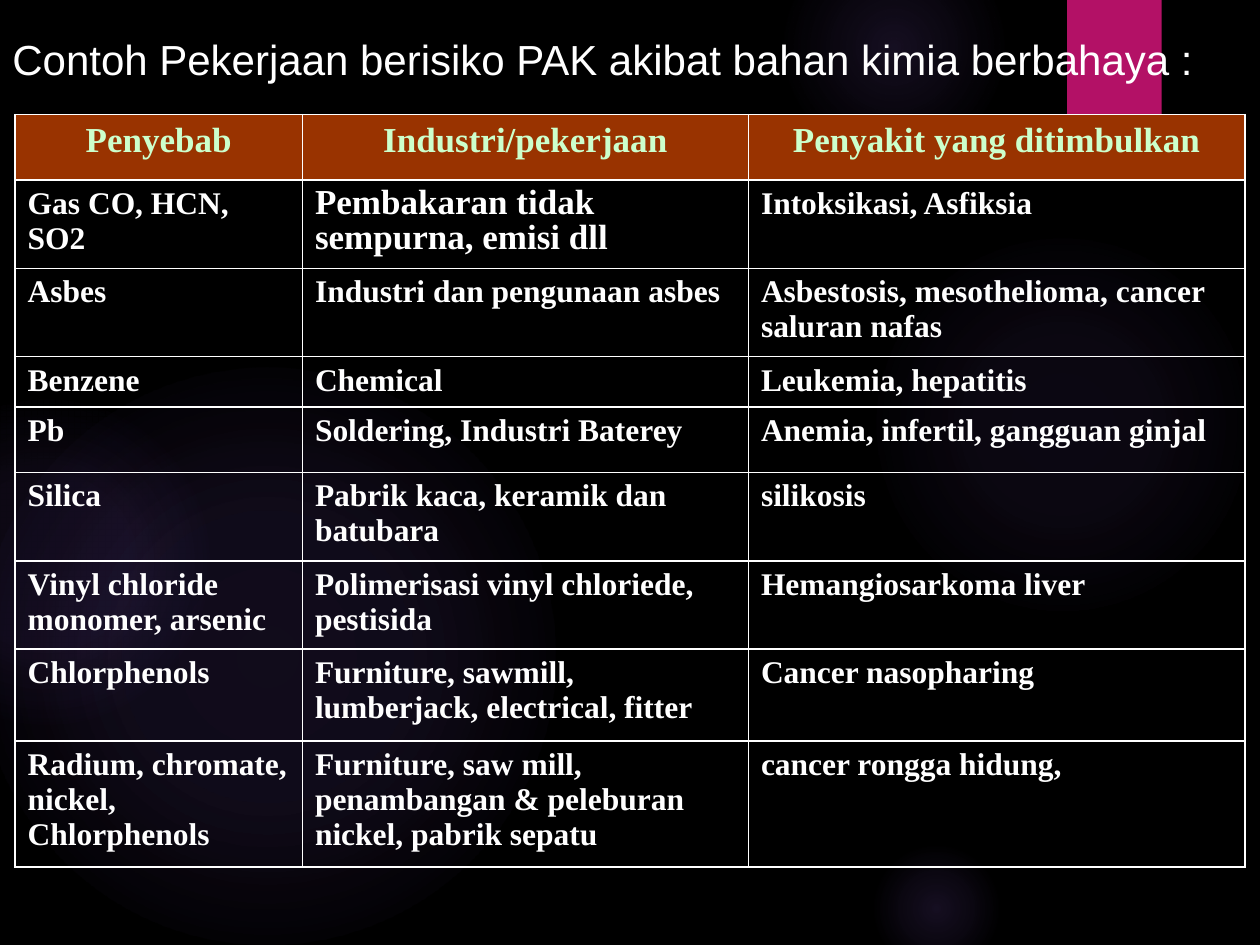
"""Build a slide listing jobs at risk of disease from hazardous chemicals."""
import dataclasses
import typing

import pptx
import pptx.dml.color
import pptx.enum.shapes
import pptx.enum.text
import pptx.oxml
import pptx.oxml.ns
import pptx.util

SHAPE = pptx.enum.shapes.MSO_SHAPE
ALIGN = pptx.enum.text.PP_ALIGN
SPACE = pptx.oxml.ns.nsdecls("a")


@dataclasses.dataclass(frozen=True)
class Theme:
    """Colours, fonts and type sizes."""
    back: str = "000000"
    text: str = "FFFFFF"
    glow: str = "9B6BF2"
    ribbon: str = "B31166"
    head: str = "993300"
    label: str = "CCFFCC"
    sans: str = "Arial"
    serif: str = "Times New Roman"
    title: int = 24
    large: int = 20
    body: int = 18


@dataclasses.dataclass(frozen=True)
class Box:
    """A place on a grid of 100 columns by 75 rows."""
    col: float
    row: float
    wide: float
    high: float

    def place(self) -> tuple[int, ...]:
        """Return left, top, width and height."""
        return tuple(map(unit, (self.col, self.row, self.wide, self.high)))


class Glow(typing.NamedTuple):
    """A round light with its centre, middle and edge strengths."""
    col: float
    row: float
    size: float
    core: int
    mid: int
    edge: int


class Entry(typing.NamedTuple):
    """One table row with its height in grid rows."""
    high: float
    cause: str
    work: str
    harm: str


THEME = Theme()
GLOWS = (
    Glow(68.9, 18.3, 30.8, 7, 6, 69),
    Glow(62.2, -5, 17.5, 14, 7, 73),
    Glow(68.9, 66.7, 10.8, 14, 7, 66),
    Glow(-1.7, 29.2, 45.8, 11, 10, 75),
    Glow(-9.2, 31.7, 25.8, 8, 8, 72),
)
WIDTHS = (22.8, 35.4, 39.4)
ENTRIES = (
    Entry(5.2, "Penyebab", "Industri/pekerjaan", "Penyakit yang ditimbulkan"),
    Entry(7, "Gas CO, HCN, SO2", "Pembakaran tidak sempurna, emisi dll", "Intoksikasi, Asfiksia"),
    Entry(7, "Asbes", "Industri dan pengunaan asbes", "Asbestosis, mesothelioma, cancer saluran nafas"),
    Entry(4, "Benzene", "Chemical", "Leukemia, hepatitis"),
    Entry(5.2, "Pb", "Soldering, Industri Baterey", "Anemia, infertil, gangguan ginjal"),
    Entry(7, "Silica", "Pabrik kaca, keramik dan batubara", "silikosis"),
    Entry(7, "Vinyl chloride monomer, arsenic", "Polimerisasi vinyl chloriede, pestisida",
          "Hemangiosarkoma liver"),
    Entry(7.3, "Chlorphenols", "Furniture, sawmill, lumberjack, electrical, fitter", "Cancer nasopharing"),
    Entry(10, "Radium, chromate, nickel, Chlorphenols",
          "Furniture, saw mill, penambangan & peleburan nickel, pabrik sepatu", "cancer rongga hidung,"),
)


def unit(count: float) -> int:
    """Turn grid steps into a length."""
    return pptx.util.Inches(count / 10)


def paint(fill, tint: str) -> None:
    """Give a fill one solid colour."""
    fill.solid()
    fill.fore_color.rgb = pptx.dml.color.RGBColor.from_string(tint)


def style(frame, font: str, size: int, tint: str, bold: bool = False) -> None:
    """Format every run of a text frame."""
    for para in frame.paragraphs:
        for run in para.runs:
            run.font.name = font
            run.font.size = pptx.util.Pt(size)
            run.font.bold = bold
            run.font.color.rgb = pptx.dml.color.RGBColor.from_string(tint)


def shape(slide, kind, box: Box):
    """Add a flat shape without outline."""
    item = slide.shapes.add_shape(kind, *box.place())
    item.shadow.inherit = False
    item.line.fill.background()
    return item


def light(slide, glow: Glow) -> None:
    """Draw a soft round light that fades outwards."""
    item = shape(slide, SHAPE.OVAL, Box(glow.col, glow.row, glow.size, glow.size))
    item.fill.background()
    stops = "".join(
        f'<a:gs pos="{spot * 1000}"><a:srgbClr val="{THEME.glow}">'
        f'<a:alpha val="{alpha * 1000}"/></a:srgbClr></a:gs>'
        for spot, alpha in ((0, glow.core), (36, glow.mid), (glow.edge, 0)))
    grad = pptx.oxml.parse_xml(
        f'<a:gradFill {SPACE} rotWithShape="1"><a:gsLst>{stops}</a:gsLst><a:path path="circle">'
        '<a:fillToRect l="50000" t="50000" r="50000" b="50000"/></a:path></a:gradFill>')
    props = item.fill._xPr
    props.replace(props.find(pptx.oxml.ns.qn("a:noFill")), grad)


def ribbon(slide, box: Box) -> None:
    """Draw the coloured tab with its drop shadow."""
    item = shape(slide, SHAPE.RECTANGLE, box)
    paint(item.fill, THEME.ribbon)
    shade = pptx.oxml.parse_xml(
        f'<a:outerShdw {SPACE} blurRad="38100" dist="25400" dir="5400000" rotWithShape="0">'
        '<a:srgbClr val="000000"><a:alpha val="45000"/></a:srgbClr></a:outerShdw>')
    item.fill._xPr.find(pptx.oxml.ns.qn("a:effectLst")).append(shade)


def title(slide, box: Box, words: str) -> None:
    """Write the slide heading."""
    frame = slide.shapes.add_textbox(*box.place()).text_frame
    frame.word_wrap = True
    frame.vertical_anchor = pptx.enum.text.MSO_ANCHOR.MIDDLE
    frame.text = words
    style(frame, THEME.sans, THEME.title, THEME.text)


def border(cell) -> None:
    """Rule all four sides of a cell."""
    props = cell._tc.get_or_add_tcPr()
    for spot, side in enumerate("LRTB"):
        props.insert(spot, pptx.oxml.parse_xml(
            f'<a:ln{side} {SPACE} w="12700"><a:solidFill><a:srgbClr val="{THEME.text}"/>'
            f'</a:solidFill></a:ln{side}>'))


def grid(slide, col: float, row: float) -> None:
    """Build the table of causes, jobs and diseases."""
    box = Box(col, row, sum(WIDTHS), sum(entry.high for entry in ENTRIES))
    table = slide.shapes.add_table(len(ENTRIES), len(WIDTHS), *box.place()).table
    table.first_row = table.horz_banding = False
    for column, wide in zip(table.columns, WIDTHS):
        column.width = unit(wide)
    for line, entry in enumerate(ENTRIES):
        table.rows[line].height = unit(entry.high)
        for cell, words in zip(table.rows[line].cells, entry[1:]):
            cell.text_frame.text = words
            if line == 0:
                paint(cell.fill, THEME.head)
                cell.text_frame.paragraphs[0].alignment = ALIGN.CENTER
                style(cell.text_frame, THEME.serif, THEME.large, THEME.label, True)
            else:
                cell.fill.background()
                style(cell.text_frame, THEME.serif, THEME.body, THEME.text, True)
            border(cell)
    burn = table.cell(1, 1).text_frame
    burn.paragraphs[0].line_spacing = 0.9
    style(burn, THEME.serif, THEME.large, THEME.text, True)


def main() -> None:
    """Assemble and save the slide."""
    deck = pptx.Presentation()
    deck.slide_width, deck.slide_height = unit(100), unit(75)
    slide = deck.slides.add_slide(deck.slide_layouts[6])
    paint(slide.background.fill, THEME.back)
    for glow in GLOWS:
        light(slide, glow)
    ribbon(slide, Box(84.7, 0, 7.5, 12))
    title(slide, Box(0, 2.1, 100, 5.1), "Contoh Pekerjaan berisiko PAK akibat bahan kimia berbahaya :")
    grid(slide, 1.2, 9.1)
    deck.save("out.pptx")


if __name__ == "__main__":
    main()
